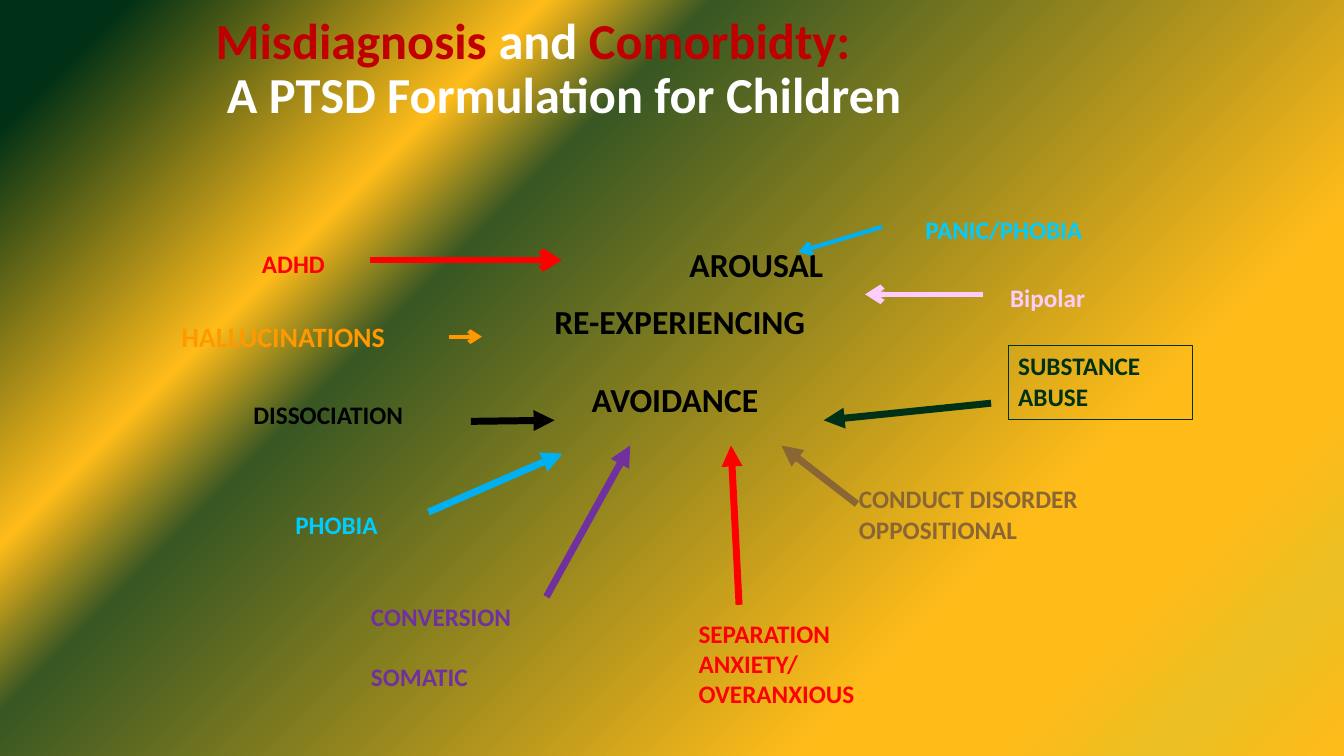
from dataclasses import dataclass

import lxml.etree
import pptx
import pptx.dml.color
import pptx.enum.shapes
import pptx.enum.text
import pptx.oxml.ns
import pptx.presentation
import pptx.slide
import pptx.text.text
import pptx.util

FONT = "Calibri"
COLOURS = {
    "crimson": "C00000",
    "white": "FFFFFF",
    "black": "000000",
    "red": "FF0000",
    "cyan": "00CCFF",
    "blue": "00B0F0",
    "purple": "7030A0",
    "brown": "896633",
    "forest": "003015",
    "pink": "FFCCFF",
    "orange": "FF9900",
    "gold": "FFBC19",
    "olive": "385723",
    "mustard": "EBBE22",
}
BACKGROUND_STOPS = [
    (6, "forest"), (26, "gold"), (34, "olive"), (74, "gold"),
    (83, "gold"), (91, "mustard"), (100, "gold"),
]
TITLE_LINES = [
    [("Misdiagnosis ", "crimson"), ("and ", "white"), ("Comorbidty:", "crimson")],
    [(" A PTSD Formulation for Children", "white")],
]


@dataclass(frozen=True)
class Label:
    lines: tuple[str, ...]
    left: float
    top: float
    width: float
    height: float
    colour: str
    size: int = 18
    centred: bool = False
    framed: bool = False
    gap: int = 0


@dataclass(frozen=True)
class Arrow:
    start: tuple[float, float]
    end: tuple[float, float]
    colour: str
    weight: float = 5
    head: str = "triangle"


LABELS = [
    Label(("AROUSAL",), 6.74, 2.37, 1.7, 0.5, "black", 24),
    Label(("RE-EXPERIENCING",), 5.4, 2.94, 2.9, 0.5, "black", 24),
    Label(("AVOIDANCE",), 5.77, 3.71, 2, 0.5, "black", 24),
    Label(("ADHD",), 2.5, 2.41, 1.42, 0.4, "red"),
    Label(("HALLUCINATIONS",), 1.7, 3.12, 2.92, 0.44, "orange", 20),
    Label(("DISSOCIATION",), 2.17, 3.91, 2.17, 0.52, "black", centred=True),
    Label(("PHOBIA",), 2.83, 5, 1.42, 0.58, "cyan"),
    Label(("CONVERSION", "SOMATIC"), 3.58, 5.92, 2.49, 1, "purple", gap=21),
    Label(("SEPARATION", "ANXIETY/", "OVERANXIOUS"), 6.83, 6.08, 2.33, 1.08, "red"),
    Label(("CONDUCT DISORDER", "OPPOSITIONAL"), 8.42, 4.75, 3.08, 0.44, "brown"),
    Label(("SUBSTANCE ABUSE",), 10, 3.43, 1.83, 0.73, "forest", framed=True),
    Label(("Bipolar",), 9.92, 2.75, 1.25, 0.42, "pink"),
    Label(("PANIC/PHOBIA",), 9.08, 2.08, 2.41, 0.92, "cyan"),
]
ARROWS = [
    Arrow((4.67, 4.18), (5.5, 4.17), "black"),
    Arrow((4.25, 5.08), (5.58, 4.5), "blue"),
    Arrow((5.42, 5.92), (6.25, 4.42), "purple"),
    Arrow((8.5, 5), (7.75, 4.42), "brown"),
    Arrow((9.83, 4), (8.17, 4.17), "forest"),
    Arrow((7.33, 6), (7.25, 4.42), "red"),
    Arrow((3.67, 2.58), (5.57, 2.58), "red", 4.75, "arrow"),
    Arrow((9.75, 2.92), (8.58, 2.92), "pink", 4, "arrow"),
    Arrow((4.45, 3.34), (4.78, 3.34), "orange", 3, "arrow"),
    Arrow((8.75, 2.25), (7.92, 2.5), "blue", 3, "arrow"),
]


def rgb(colour: str) -> pptx.dml.color.RGBColor:
    return pptx.dml.color.RGBColor.from_string(COLOURS[colour])


def add_child(parent: lxml.etree.ElementBase, tag: str, **attributes: str) -> lxml.etree.ElementBase:
    return lxml.etree.SubElement(parent, pptx.oxml.ns.qn(tag), attributes)


def paint_background(page: pptx.slide.Slide) -> None:
    fill = page.background.fill
    fill.gradient()
    fill.gradient_angle = 315
    stops = page.element.find(".//" + pptx.oxml.ns.qn("a:gsLst"))
    for stop in list(stops):
        stops.remove(stop)
    for percent, colour in BACKGROUND_STOPS:
        stop = add_child(stops, "a:gs", pos=str(percent * 1000))
        add_child(stop, "a:srgbClr", val=COLOURS[colour])


def add_span(para: pptx.text.text._Paragraph, text: str, size: int, colour: str) -> None:
    span = para.add_run()
    span.text = text
    span.font.name = FONT
    span.font.size = pptx.util.Pt(size)
    span.font.bold = True
    span.font.color.rgb = rgb(colour)


def draw_title(page: pptx.slide.Slide) -> None:
    box = page.shapes.add_textbox(*map(pptx.util.Inches, (2.04, 0.07, 8.5, 1.25)))
    box.text_frame.word_wrap = True
    box.text_frame.vertical_anchor = pptx.enum.text.MSO_ANCHOR.MIDDLE
    para = box.text_frame.paragraphs[0]
    para.line_spacing = 0.9
    for index, line in enumerate(TITLE_LINES):
        if index:
            para.add_line_break()
        for text, colour in line:
            add_span(para, text, 36, colour)


def draw_label(page: pptx.slide.Slide, label: Label) -> None:
    box = page.shapes.add_textbox(
        *map(pptx.util.Inches, (label.left, label.top, label.width, label.height))
    )
    frame = box.text_frame
    frame.word_wrap = True
    if label.framed:
        box.line.color.rgb = rgb(label.colour)
        box.line.width = pptx.util.Pt(0.75)
    for index, line in enumerate(label.lines):
        para = frame.add_paragraph() if index else frame.paragraphs[0]
        if index and label.gap:
            para.space_before = pptx.util.Pt(label.gap)
        if label.centred:
            para.alignment = pptx.enum.text.PP_ALIGN.CENTER
        add_span(para, line, label.size, label.colour)


def draw_arrow(page: pptx.slide.Slide, arrow: Arrow) -> None:
    connector = page.shapes.add_connector(
        pptx.enum.shapes.MSO_CONNECTOR.STRAIGHT,
        *map(pptx.util.Inches, arrow.start + arrow.end),
    )
    connector.line.color.rgb = rgb(arrow.colour)
    connector.line.width = pptx.util.Pt(arrow.weight)
    add_child(connector.line._get_or_add_ln(), "a:tailEnd", type=arrow.head)
    add_child(connector.element.spPr, "a:effectLst")


def build_deck() -> pptx.presentation.Presentation:
    deck = pptx.Presentation()
    deck.slide_width = pptx.util.Inches(13.33)
    deck.slide_height = pptx.util.Inches(7.5)
    page = deck.slides.add_slide(deck.slide_layouts[6])
    paint_background(page)
    draw_title(page)
    for label in LABELS:
        draw_label(page, label)
    for arrow in ARROWS:
        draw_arrow(page, arrow)
    return deck


def main() -> None:
    build_deck().save("out.pptx")


if __name__ == "__main__":
    main()
